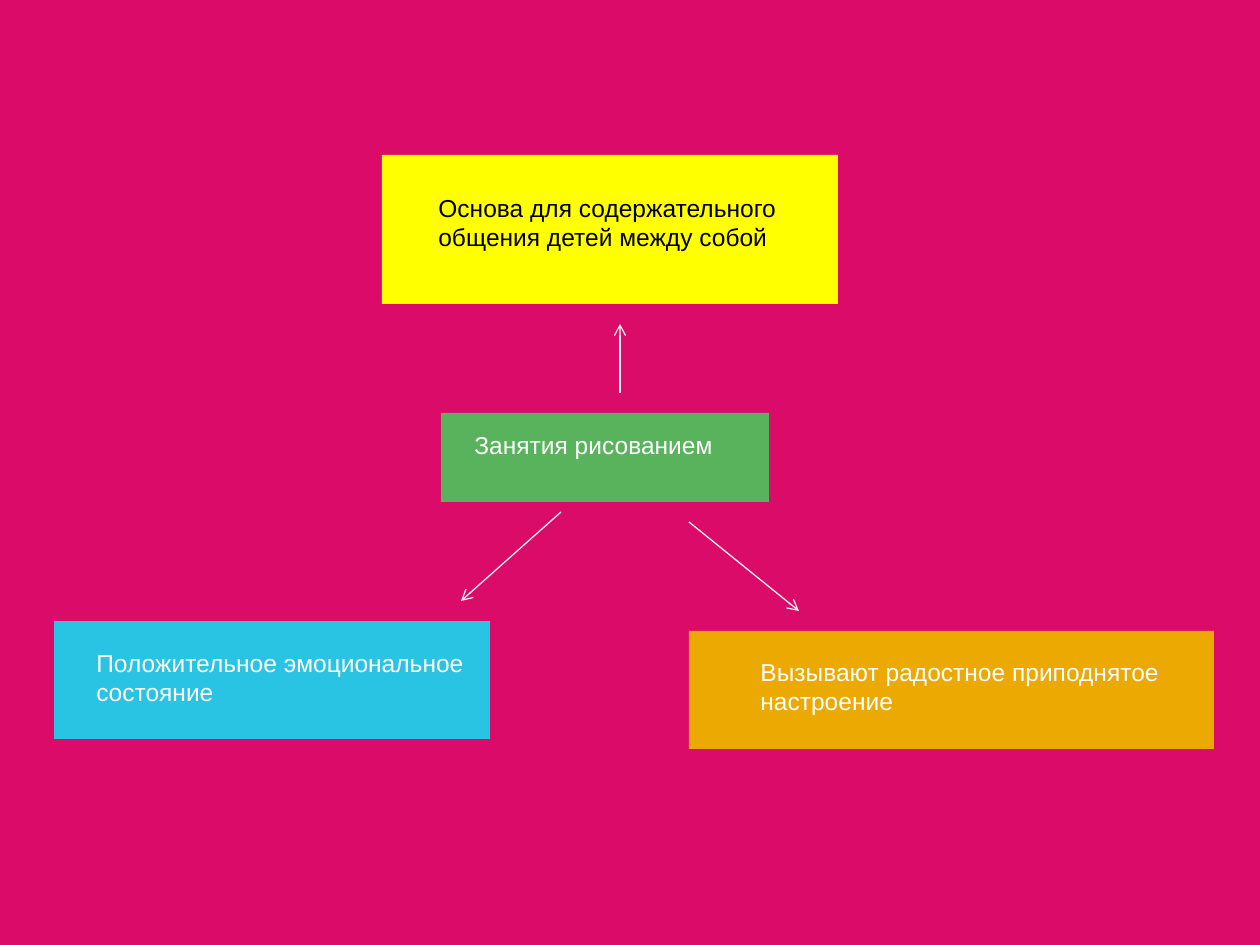
from pptx import Presentation
from pptx.dml.color import RGBColor
from pptx.enum.shapes import MSO_CONNECTOR as Link, MSO_SHAPE as Kind
from pptx.enum.text import MSO_ANCHOR as Anchor, MSO_AUTO_SIZE as Fit, PP_ALIGN as Align
from pptx.oxml.ns import qn
from pptx.util import Emu, Pt
from lxml.etree import SubElement

SCALE = 914400 / 126
PINK = RGBColor(0xDB, 0x0B, 0x69)
YELLOW = RGBColor(0xFF, 0xFF, 0x00)
GREEN = RGBColor(0x59, 0xB3, 0x5D)
CYAN = RGBColor(0x29, 0xC4, 0xE3)
ORANGE = RGBColor(0xEC, 0xA9, 0x02)
BLACK = RGBColor(0x00, 0x00, 0x00)
WHITE = RGBColor(0xFF, 0xFF, 0xFF)
PALE = RGBColor(0xF2, 0xF2, 0xF2)

CARDS = [
    ((382, 155, 456, 149), YELLOW, BLACK, (44, 31, 364, 72), True,
     ["Основа для содержательного", "общения детей между собой"]),
    ((441, 413, 328, 89), GREEN, WHITE, (21, 10, 295, 43), True,
     ["Занятия рисованием"]),
    ((54, 621, 436, 118), CYAN, WHITE, (30, 20, 394, 72), False,
     ["Положительное эмоциональное", "cостояние"]),
    ((689, 631, 525, 118), ORANGE, WHITE, (59, 19, 433, 72), False,
     ["Вызывают радостное приподнятое", "настроение"]),
]
ARROWS = [
    ((561, 512), (461, 601)),
    ((689, 522), (799, 611)),
    ((620, 393), (620, 324)),
]


def px(*nums):
    return [Emu(round(n * SCALE)) for n in nums]


def panel(slide, box, fill):
    shape = slide.shapes.add_shape(Kind.RECTANGLE, *px(*box))
    shape.shadow.inherit = False
    shape.fill.solid()
    shape.fill.fore_color.rgb = fill
    shape.line.fill.background()


def label(slide, box, lines, color, wrap):
    frame = slide.shapes.add_textbox(*px(*box)).text_frame
    frame.word_wrap = wrap
    frame.auto_size = Fit.SHAPE_TO_FIT_TEXT
    frame.vertical_anchor = Anchor.MIDDLE
    for i, line in enumerate(lines):
        para = frame.add_paragraph() if i else frame.paragraphs[0]
        para.alignment = Align.LEFT
        run = para.add_run()
        run.text = line
        run.font.name = "Arial"
        run.font.size = Pt(14)
        run.font.color.rgb = color


def card(slide, box, fill, color, inner, wrap, lines):
    left, top = box[:2]
    x, y, wide, high = inner
    panel(slide, box, fill)
    label(slide, (left + x, top + y, wide, high), lines, color, wrap)


def arrow(slide, start, end):
    link = slide.shapes.add_connector(Link.STRAIGHT, *px(*start, *end))
    link.line.color.rgb = PALE
    link.line.width = Pt(0.75)
    SubElement(link.line._get_or_add_ln(), qn("a:tailEnd"), type="arrow")
    SubElement(link._element.spPr, qn("a:effectLst"))


def main():
    deck = Presentation()
    wide, high = 1260, 945
    deck.slide_width, deck.slide_height = px(wide, high)
    slide = deck.slides.add_slide(deck.slide_layouts[6])
    panel(slide, (0, 0, wide, high), PINK)
    for item in CARDS:
        card(slide, *item)
    for start, end in ARROWS:
        arrow(slide, start, end)
    deck.save("out.pptx")


if __name__ == "__main__":
    main()
